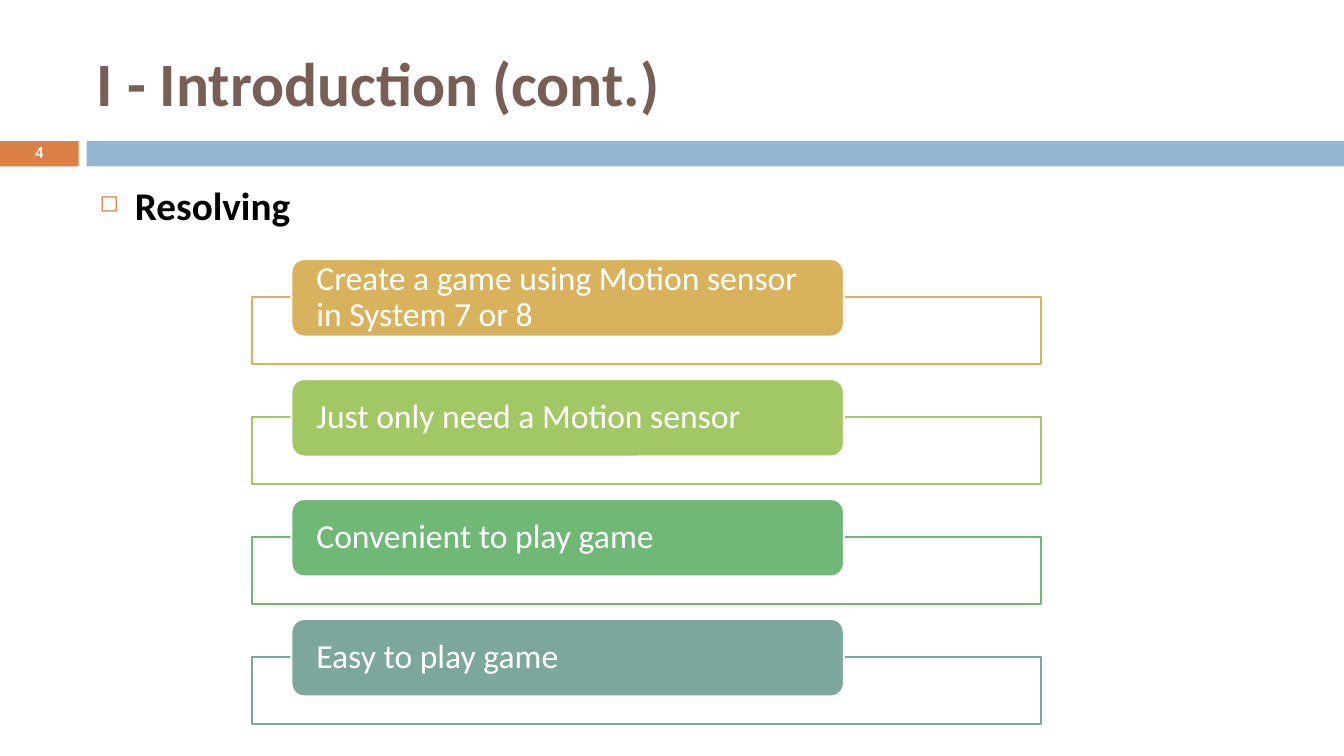
from dataclasses import dataclass

from lxml.etree import SubElement
from pptx import Presentation
from pptx.dml.color import RGBColor
from pptx.enum.shapes import MSO_SHAPE as Geo
from pptx.enum.text import MSO_ANCHOR as Anchor, MSO_AUTO_SIZE as AutoSize, PP_ALIGN as Align
from pptx.oxml.ns import qn
from pptx.shapes.autoshape import Shape
from pptx.slide import Slide
from pptx.util import Emu, Pt


@dataclass(frozen=True)
class Theme:
    font: str = "Calibri"
    orange: str = "DD8047"
    blue: str = "94B6D2"
    brown: str = "775F55"
    white: str = "FFFFFF"
    black: str = "000000"
    title: float = 44
    heading: float = 28
    item: float = 24
    number: float = 11.9
    outline: float = 1.5


@dataclass(frozen=True)
class Box:
    left: int
    top: int
    width: int
    height: int


@dataclass(frozen=True)
class Item:
    text: str
    color: str


THEME = Theme()
ITEMS = (
    Item("Create a game using Motion sensor in System 7 or 8", "D8B25C"),
    Item("Just only need a Motion sensor", "A2C866"),
    Item("Convenient to play game", "70B876"),
    Item("Easy to play game", "7BA79D"),
)
ITEMS_TOP = 257
ITEM_PITCH = 119
FRAME_DROP = 38


def px(n: int) -> Emu:
    return Emu(n * 9144)


def place(sp: Shape, box: Box) -> None:
    sp.left, sp.top = px(box.left), px(box.top)
    sp.width, sp.height = px(box.width), px(box.height)


def add_box(s: Slide, box: Box, fill: str, line: str | None = None,
            geo: Geo = Geo.RECTANGLE, alpha: int = 100) -> Shape:
    sp = s.shapes.add_shape(geo, px(box.left), px(box.top), px(box.width), px(box.height))
    sp.shadow.inherit = False
    sp.fill.solid()
    sp.fill.fore_color.rgb = RGBColor.from_string(fill)
    if alpha < 100:
        color = sp.fill._xPr.find(qn("a:solidFill"))[0]
        SubElement(color, qn("a:alpha"), val=str(alpha * 1000))
    if line:
        sp.line.color.rgb = RGBColor.from_string(line)
        sp.line.width = Pt(THEME.outline)
    else:
        sp.line.fill.background()
    return sp


def set_text(sp: Shape, text: str, *, size: float, color: str, bold: bool = False,
             align: Align = Align.LEFT, anchor: Anchor = Anchor.MIDDLE,
             spacing: float = 1.0, inset_x: int = 10, inset_y: int = 5) -> None:
    tf = sp.text_frame
    tf.word_wrap = True
    tf.auto_size = AutoSize.NONE
    tf.vertical_anchor = anchor
    tf.margin_left = tf.margin_right = px(inset_x)
    tf.margin_top = tf.margin_bottom = px(inset_y)
    p = tf.paragraphs[0]
    p.alignment = align
    p.line_spacing = spacing
    r = p.add_run()
    r.text = text
    r.font.name = THEME.font
    r.font.size = Pt(size)
    r.font.bold = bold
    r.font.color.rgb = RGBColor.from_string(color)


def add_bullet(sp: Shape, char: str, color: str, percent: int, indent: int) -> None:
    p = sp.text_frame.paragraphs[0]
    p.space_before = Pt(7)
    pPr = p._p.get_or_add_pPr()
    pPr.set("marL", str(px(indent)))
    pPr.set("indent", str(-px(indent)))
    SubElement(SubElement(pPr, qn("a:buClr")), qn("a:srgbClr"), val=color)
    SubElement(pPr, qn("a:buSzPct"), val=str(percent * 1000))
    SubElement(pPr, qn("a:buChar"), char=char)


def add_item(s: Slide, item: Item, top: int) -> None:
    add_box(s, Box(250, top + FRAME_DROP, 783, 66), THEME.white, line=item.color, alpha=90)
    chip = add_box(s, Box(289, top, 548, 77), item.color, line=THEME.white,
                   geo=Geo.ROUNDED_RECTANGLE)
    set_text(chip, item.text, size=THEME.item, color=THEME.white, spacing=0.9,
             inset_x=21, inset_y=0)


def main() -> None:
    prs = Presentation()
    prs.slide_width, prs.slide_height = px(1333), px(750)
    s = prs.slides.add_slide(prs.slide_layouts[5])

    title = s.shapes.title
    place(title, Box(83, -28, 1111, 153))
    set_text(title, "I - Introduction (cont.)", size=THEME.title, color=THEME.brown,
             bold=True, anchor=Anchor.BOTTOM, spacing=0.85, inset_x=13, inset_y=7)

    number = add_box(s, Box(0, 140, 78, 25), THEME.orange)
    set_text(number, "4", size=THEME.number, color=THEME.white, bold=True,
             align=Align.CENTER, spacing=0.8)
    add_box(s, Box(86, 140, 1247, 25), THEME.blue)

    heading = s.shapes.add_textbox(px(89), px(175), px(1189), px(60))
    set_text(heading, "Resolving", size=THEME.heading, color=THEME.black, bold=True,
             anchor=Anchor.TOP)
    add_bullet(heading, "◻", THEME.orange, percent=60, indent=35)

    for i, item in enumerate(ITEMS):
        add_item(s, item, ITEMS_TOP + i * ITEM_PITCH)

    prs.save("out.pptx")


if __name__ == "__main__":
    main()
